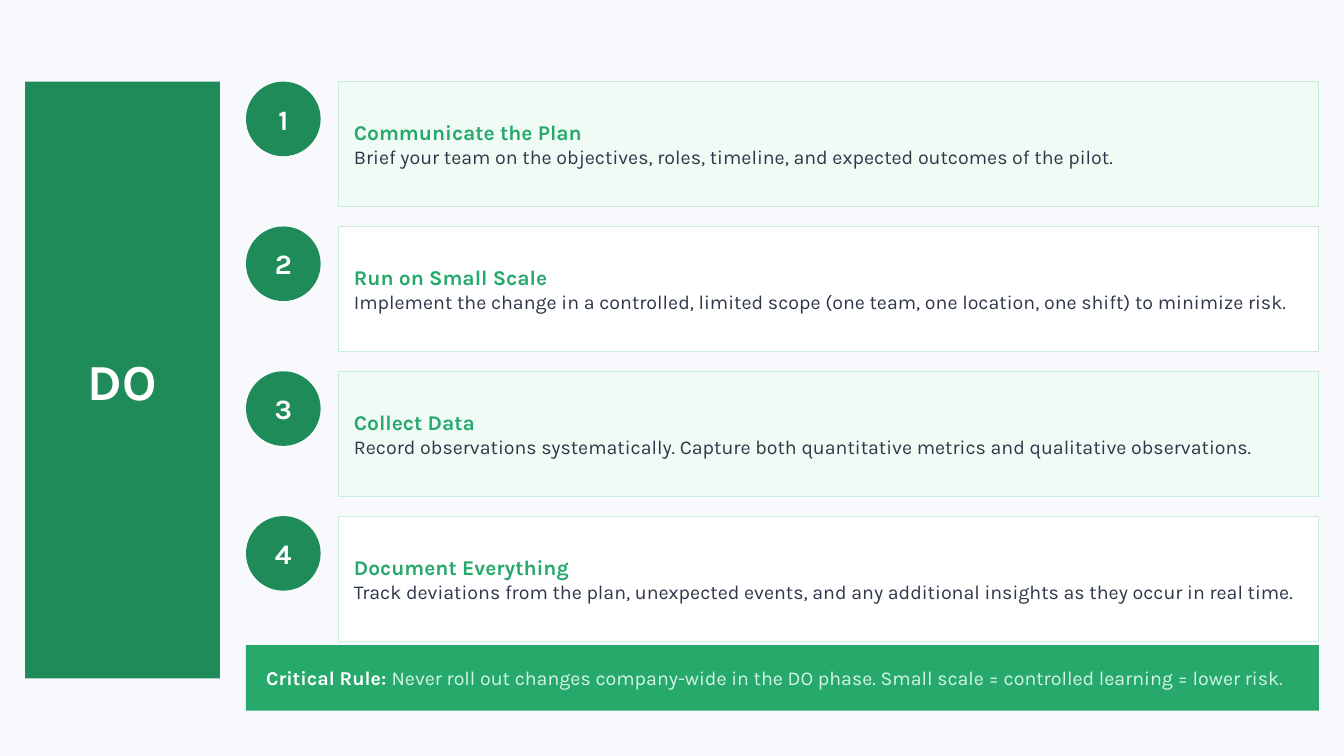
from lxml import etree
from pptx import Presentation
from pptx.dml.color import RGBColor
from pptx.enum import shapes, text
from pptx.oxml import ns
from pptx.util import Inches, Pt

# Content
PHASE = "DO"
STEPS = [
    ("Communicate the Plan",
     "Brief your team on the objectives, roles, timeline, and expected outcomes of the pilot."),
    ("Run on Small Scale",
     "Implement the change in a controlled, limited scope (one team, one location, one shift) to minimize risk."),
    ("Collect Data",
     "Record observations systematically. Capture both quantitative metrics and qualitative observations."),
    ("Document Everything",
     "Track deviations from the plan, unexpected events, and any additional insights as they occur in real time."),
]
RULE = [("Critical Rule: ", "FFFFFF", True),
        ("Never roll out changes company-wide in the DO phase. "
         "Small scale = controlled learning = lower risk.", "D4F5E7", False)]

# Style and layout, in inches
FONT = "Karla"
DARK_GREEN, GREEN, WHITE, INK = "1E8B58", "27A96C", "FFFFFF", "2D3748"
CARD_FILLS, CARD_LINE = ("F0FBF6", WHITE), "C8EDDA"
TOP, RIGHT = 0.81, 13.08
STEP_PITCH = (5.12 - TOP) / (len(STEPS) - 1)
BADGE_LEFT, BADGE_SIZE = 2.44, 0.74
CARD_LEFT, CARD_HEIGHT = 3.36, 1.24


def rgb(hex_color):
    return RGBColor.from_string(hex_color)


def style_font(font, size, color, bold):
    font.name, font.size, font.bold = FONT, Pt(size), bold
    font.color.rgb = rgb(color)


def set_frame(sp, margin_x=0, margin_y=0):
    tf = sp.text_frame
    tf.word_wrap = True
    tf.auto_size = text.MSO_AUTO_SIZE.NONE
    tf.vertical_anchor = text.MSO_ANCHOR.MIDDLE
    tf.margin_left = tf.margin_right = Inches(margin_x)
    tf.margin_top = tf.margin_bottom = Inches(margin_y)
    return tf


def write(p, words, size, color, bold, align=text.PP_ALIGN.LEFT):
    p.text, p.alignment = words, align
    style_font(p.font, size, color, bold)


def add_box(s, kind, left, top, width, height, fill, line=None):
    sp = s.shapes.add_shape(kind, *map(Inches, (left, top, width, height)))
    sp.shadow.inherit = False
    sp.fill.solid()
    sp.fill.fore_color.rgb = rgb(fill)
    if line:
        sp.line.color.rgb = rgb(line)
        sp.line.width = Pt(0.72)
    else:
        sp.line.fill.background()
    return sp


prs = Presentation()
prs.slide_width, prs.slide_height = Inches(13.33), Inches(7.5)
s = prs.slides.add_slide(prs.slide_layouts[5])
s.background.fill.solid()
s.background.fill.fore_color.rgb = rgb("F7F9FC")

# Phase panel: the title as a rounded, upward-reading block
title = s.shapes.title
title.left, title.top, title.width, title.height = map(Inches, (0.25, TOP, 1.93, 5.92))
geom = etree.SubElement(title.element.spPr, ns.qn("a:prstGeom"), prst="roundRect")
guides = etree.SubElement(geom, ns.qn("a:avLst"))
etree.SubElement(guides, ns.qn("a:gd"), name="adj", fmla="val 10000")
title.fill.solid()
title.fill.fore_color.rgb = rgb(DARK_GREEN)
tf = set_frame(title)
tf._txBody.bodyPr.set("vert", "vert270")
write(tf.paragraphs[0], PHASE, 36, WHITE, True, text.PP_ALIGN.CENTER)

# Numbered steps
for i, (heading, detail) in enumerate(STEPS):
    top = TOP + i * STEP_PITCH
    badge = add_box(s, shapes.MSO_SHAPE.OVAL, BADGE_LEFT, top, BADGE_SIZE, BADGE_SIZE, DARK_GREEN)
    write(set_frame(badge).paragraphs[0], str(i + 1), 20, WHITE, True, text.PP_ALIGN.CENTER)

    card = add_box(s, shapes.MSO_SHAPE.RECTANGLE, CARD_LEFT, top, RIGHT - CARD_LEFT,
                   CARD_HEIGHT, CARD_FILLS[i % 2], CARD_LINE)
    tf = set_frame(card, 0.15, 0.1)
    write(tf.paragraphs[0], heading, 15, GREEN, True)
    write(tf.add_paragraph(), detail, 14, INK, False)

# Critical rule banner
banner = add_box(s, shapes.MSO_SHAPE.RECTANGLE, BADGE_LEFT, 6.4, RIGHT - BADGE_LEFT, 0.65, GREEN)
p = set_frame(banner, 0.2).paragraphs[0]
p.alignment = text.PP_ALIGN.LEFT
for words, color, bold in RULE:
    r = p.add_run()
    r.text = words
    style_font(r.font, 14, color, bold)

prs.save("out.pptx")
